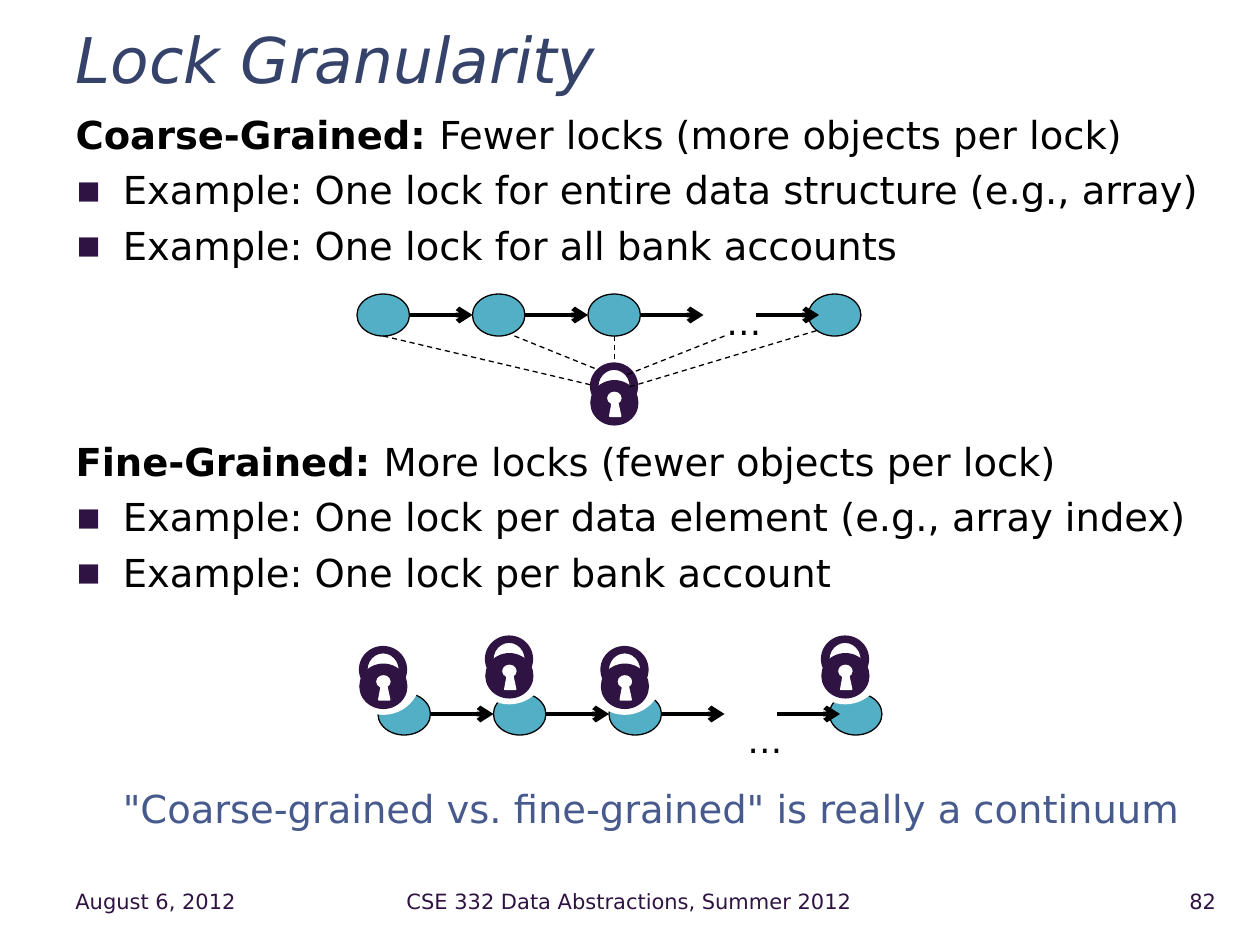
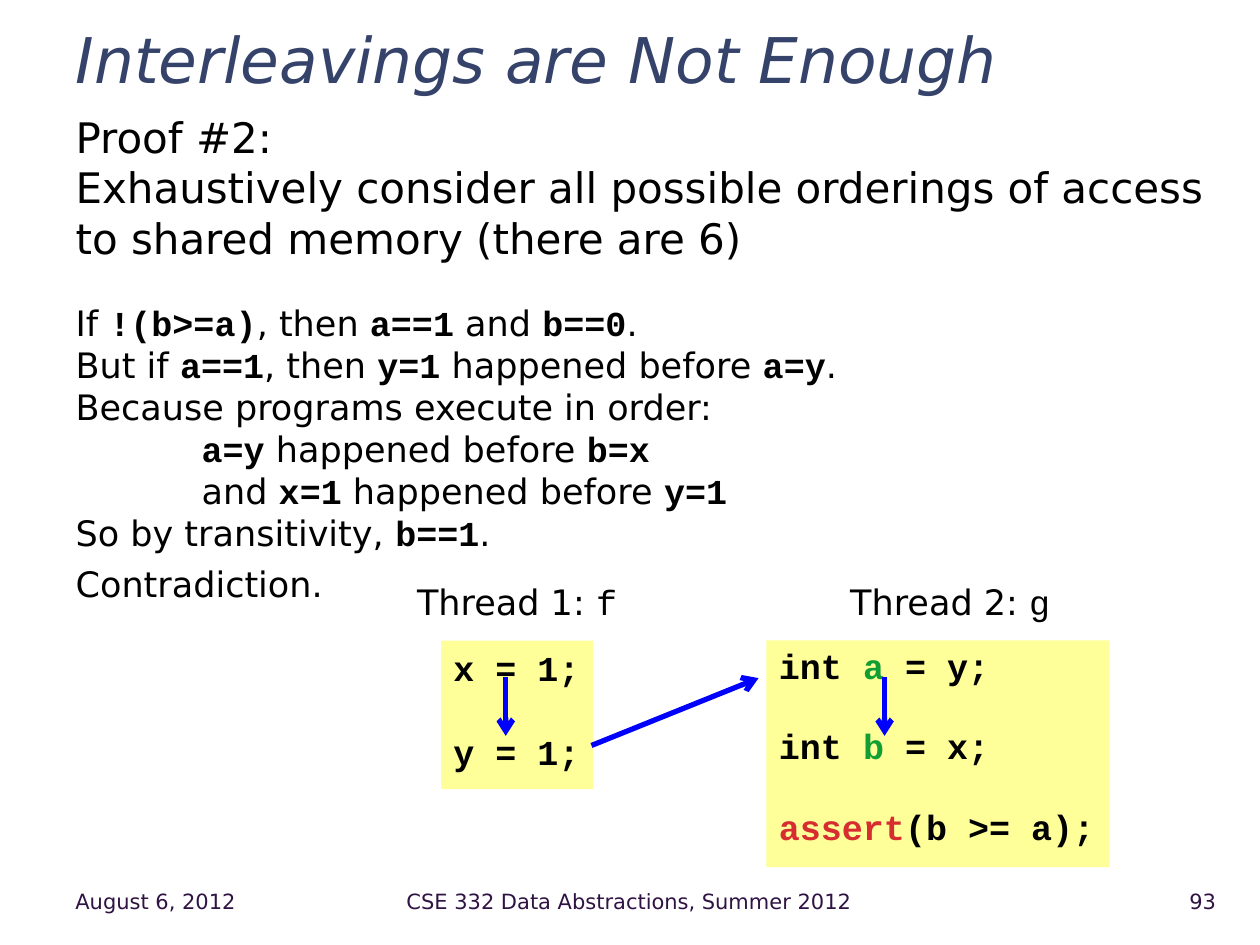
import pptx
import pptx.dml.color
import pptx.enum.dml
import pptx.enum.shapes
import pptx.enum.text
import pptx.oxml
import pptx.oxml.ns
import pptx.shapes.autoshape
import pptx.shapes.connector
import pptx.slide
import pptx.text.text
import pptx.util
from dataclasses import dataclass
from typing import Any, NamedTuple, Optional

Pt = pptx.util.Pt
RGB = pptx.dml.color.RGBColor
ALIGN = pptx.enum.text.PP_ALIGN
ANCHOR = pptx.enum.text.MSO_ANCHOR
OVAL = pptx.enum.shapes.MSO_SHAPE.OVAL
RECTANGLE = pptx.enum.shapes.MSO_SHAPE.RECTANGLE
qn = pptx.oxml.ns.qn

# Shared look
BLACK = RGB(0x00, 0x00, 0x00)
WHITE = RGB(0xFF, 0xFF, 0xFF)
PLUM = RGB(0x2F, 0x13, 0x43)
NAVY = RGB(0x35, 0x43, 0x6A)
SLATE = RGB(0x47, 0x5A, 0x8D)
TEAL = RGB(0x53, 0xAF, 0xC5)
YELLOW = RGB(0xFF, 0xFF, 0x99)
GREEN = RGB(0x11, 0x9F, 0x33)
RED = RGB(0xD6, 0x2D, 0x31)
BLUE = RGB(0x00, 0x00, 0xFF)
SANS = "DejaVu Sans"
MONO = "Courier New"


class Box(NamedTuple):
    left: float
    top: float
    width: float
    height: float


class Span(NamedTuple):
    text: str
    bold: bool = False
    font: str = SANS
    color: RGB = BLACK
    italic: bool = False


@dataclass
class Para:
    spans: list[Span]
    size: float
    before: float = 0
    margin: float = 0
    hanging: float = 0
    bullet: bool = False
    align: Any = ALIGN.LEFT
    spacing: Any = None


class Link(NamedTuple):
    x1: float
    y1: float
    x2: float
    y2: float
    color: RGB = BLACK
    width: float = 2.75
    dashed: bool = False


# Text
def format_bullet(paragraph: pptx.text.text._Paragraph, item: Para) -> None:
    props = paragraph._p.get_or_add_pPr()
    props.set("marL", str(Pt(item.margin)))
    props.set("indent", str(Pt(-item.hanging)))
    marks = ["<a:buNone %s/>"]
    if item.bullet:
        marks = [f'<a:buClr %s><a:srgbClr val="{PLUM}"/></a:buClr>',
                 f'<a:buFont %s typeface="{SANS}"/>', '<a:buChar %s char="▪"/>']
    for mark in marks:
        props.append(pptx.oxml.parse_xml(mark % pptx.oxml.ns.nsdecls("a")))


def write(frame: pptx.text.text.TextFrame, items: list[Para], anchor: Any = ANCHOR.TOP,
          wrap: bool = True, inset: float = 3.6) -> None:
    frame.auto_size = pptx.enum.text.MSO_AUTO_SIZE.NONE
    frame.word_wrap = wrap
    frame.vertical_anchor = anchor
    frame.margin_left = frame.margin_right = Pt(7.2)
    frame.margin_top = frame.margin_bottom = Pt(inset)
    for index, item in enumerate(items):
        paragraph = frame.add_paragraph() if index else frame.paragraphs[0]
        paragraph.alignment = item.align
        paragraph.space_before = Pt(item.before)
        paragraph.space_after = Pt(0)
        paragraph.line_spacing = item.spacing
        format_bullet(paragraph, item)
        for span in item.spans:
            run = paragraph.add_run()
            run.text = span.text
            run.font.name = span.font
            run.font.size = Pt(item.size)
            run.font.bold = span.bold
            run.font.italic = span.italic
            run.font.color.rgb = span.color


def points(box: Box) -> list[pptx.util.Length]:
    return [Pt(value) for value in box]


def add_text(slide: pptx.slide.Slide, box: Box, item: Para, **layout: Any) -> None:
    write(slide.shapes.add_textbox(*points(box)).text_frame, [item], **layout)


def fill_placeholder(holder: Any, box: Box, items: list[Para], **layout: Any) -> None:
    holder.left, holder.top, holder.width, holder.height = points(box)
    write(holder.text_frame, items, **layout)


def code(text: str, color: RGB = BLACK) -> Span:
    return Span(text, True, MONO, color)


def prose(text: str) -> list[Span]:
    """Parts between backticks are code."""
    return [code(part) if index % 2 else Span(part)
            for index, part in enumerate(text.split("`")) if part]


# Shapes
def paint(shape: pptx.shapes.autoshape.Shape, fill: RGB, line: Optional[RGB],
          width: float = 1) -> None:
    shape.shadow.inherit = False
    shape.fill.solid()
    shape.fill.fore_color.rgb = fill
    if line is None:
        shape.line.fill.background()
    else:
        shape.line.color.rgb = line
        shape.line.width = Pt(width)


def add_link(slide: pptx.slide.Slide, link: Link) -> None:
    connector = slide.shapes.add_connector(
        pptx.enum.shapes.MSO_CONNECTOR.STRAIGHT,
        Pt(link.x1), Pt(link.y1), Pt(link.x2), Pt(link.y2))
    connector.line.color.rgb = link.color
    connector.line.width = Pt(link.width)
    props = connector._element.spPr
    if link.dashed:
        connector.line.dash_style = pptx.enum.dml.MSO_LINE.DASH
    else:
        head = props.find(qn("a:ln")).makeelement(qn("a:tailEnd"), {"type": "arrow"})
        props.find(qn("a:ln")).append(head)
    props.append(props.makeelement(qn("a:effectLst"), {}))


LOCK_DISCS = [  # halo, shackle, shackle opening, body, keyhole
    (Box(0, 0, 42, 42), WHITE, WHITE),
    (Box(7.6, 3.6, 26.6, 26), PLUM, PLUM),
    (Box(11.5, 6.9, 18.8, 20), WHITE, PLUM),
    (Box(7.8, 13.7, 26.6, 25), PLUM, PLUM),
    (Box(16.4, 19.2, 9.4, 8.6), WHITE, PLUM),
]
KEYHOLE_SLOT = [(18.5, 33.8), (19.9, 26.3), (23, 26.3), (24.6, 33.8)]


def add_lock(slide: pptx.slide.Slide, left: float, top: float) -> None:
    parts = slide.shapes.add_group_shape().shapes
    for disc, fill, line in LOCK_DISCS:
        box = disc._replace(left=left + disc.left, top=top + disc.top)
        paint(parts.add_shape(OVAL, *points(box)), fill, line)
    corners = [(Pt(left + x), Pt(top + y)) for x, y in KEYHOLE_SLOT]
    outline = parts.build_freeform(*corners[0])
    outline.add_line_segments(corners[1:], close=True)
    paint(outline.convert_to_shape(), WHITE, WHITE)


def add_linked_list(slide: pptx.slide.Slide, left: float, top: float,
                    dots_drop: float) -> None:
    for offset in (0, 66, 132, 258):
        node = slide.shapes.add_shape(OVAL, *points(Box(left + offset, top, 30, 24)))
        paint(node, TEAL, BLACK, 0.75)
    for index in range(4):
        start = left + 30 + 66 * index
        add_link(slide, Link(start, top + 12, start + 36, top + 12))
    add_text(slide, Box(left + 204, top + dots_drop, 34.5, 31.5),
             Para([Span("…")], 20), wrap=False)


def add_code_box(slide: pptx.slide.Slide, box: Box, lines: list[list[Span]],
                 pitch: float) -> None:
    panel = slide.shapes.add_shape(RECTANGLE, *points(box))
    paint(panel, YELLOW, None)
    gap = pitch + 8  # one open line between statements
    write(panel.text_frame,
          [Para(line, 20, before=gap if index else 0, spacing=Pt(pitch))
           for index, line in enumerate(lines)], wrap=False, inset=7.2)


# Frame common to both slides
def add_slide(deck: Any, title: str, number: int, body: list[Para],
              body_width: float) -> pptx.slide.Slide:
    slide = deck.slides.add_slide(deck.slide_layouts[1])
    fill_placeholder(slide.shapes.title, Box(36, 12, 666, 38),
                     [Para([Span(title, color=NAVY, italic=True)], 36, spacing=1.1)],
                     anchor=ANCHOR.MIDDLE)
    fill_placeholder(slide.placeholders[1], Box(36, 60, body_width, 432), body)
    for left, width, text, align in (
            (36, 126, "August 6, 2012", ALIGN.LEFT),
            (167, 385, "CSE 332 Data Abstractions, Summer 2012", ALIGN.CENTER),
            (640, 62, str(number), ALIGN.RIGHT)):
        add_text(slide, Box(left, 500.4, width, 28.8),
                 Para([Span(text, color=PLUM)], 12, align=align), anchor=ANCHOR.MIDDLE)
    return slide


def build_granularity(deck: Any) -> None:
    def heading(term: str, meaning: str, before: float) -> Para:
        return Para([Span(term, bold=True), Span(meaning)], 22, before)

    def example(text: str) -> Para:
        return Para([Span("Example: " + text)], 22, 5.1, 27, 27, bullet=True)

    slide = add_slide(deck, "Lock Granularity", 82, [
        heading("Coarse-Grained: ", "Fewer locks (more objects per lock)", 0),
        example("One lock for entire data structure (e.g., array)"),
        example("One lock for all bank accounts"),
        heading("Fine-Grained: ", "More locks (fewer objects per lock)", 97.5),
        example("One lock per data element (e.g., array index)"),
        example("One lock per bank account"),
        Para([Span('"Coarse-grained vs. fine-grained" is really a continuum', color=SLATE)],
             22, 108.5, align=ALIGN.CENTER),
    ], 672)

    # One lock shared by the whole list
    add_linked_list(slide, 204, 168, 0)
    add_lock(slide, 330, 204)
    for tether in ((219, 192, 338, 220), (294, 192, 341, 211), (351, 192, 351, 207),
                   (466.5, 189, 360, 221), (414, 192, 358.5, 214)):
        add_link(slide, Link(*tether, width=0.75, dashed=True))

    # One lock on each node
    add_linked_list(slide, 216, 396, 10.8)
    for left, top in ((198, 366), (270, 360), (336, 366), (462, 360)):
        add_lock(slide, left, top)


def build_interleavings(deck: Any) -> None:
    steps = [
        ("If `!(b>=a)`, then `a==1` and `b==0`.", 22.4, 0),
        ("But if `a==1`, then `y=1` happened before `a=y`.", 0, 0),
        ("Because programs execute in order:", 0, 0),
        ("`a=y` happened before `b=x`", 0, 72),
        ("and `x=1` happened before `y=1`", 0, 72),
        ("So by transitivity, `b==1`.", 0, 0),
        ("Contradiction.", 4.7, 0),
    ]
    claim = ["Proof #2:", "Exhaustively consider all possible orderings of access "
             "to shared memory (there are 6)"]
    slide = add_slide(
        deck, "Interleavings are Not Enough", 93,
        [Para([Span(text)], 24) for text in claim]
        + [Para(prose(text), 20, before, margin) for text, before, margin in steps], 666)

    # Threads
    add_code_box(slide, Box(252, 366, 87, 85), [[code("x = 1;")], [code("y = 1;")]], 20)
    add_code_box(slide, Box(438, 366, 196, 129.6), [
        [code("int "), code("a", GREEN), code(" = y;")],
        [code("int "), code("b", GREEN), code(" = x;")],
        [code("assert", RED), code("(b >= a);")],
    ], 19)
    for left, width, label, name in ((229, 133, "Thread 1: ", "f"),
                                     (468, 150, "Thread 2: ", "g")):
        add_text(slide, Box(left, 328.3, width, 31.5),
                 Para([Span(label), Span(name, font=MONO)], 20, align=ALIGN.CENTER))

    # Happens-before arrows
    for ends in ((338, 426, 433.5, 387.5), (289, 387, 289, 420.5),
                 (505.5, 387, 505.5, 420.5)):
        add_link(slide, Link(*ends, color=BLUE, width=3))


def main() -> None:
    deck = pptx.Presentation()
    deck.slide_width, deck.slide_height = Pt(720), Pt(540)
    build_granularity(deck)
    build_interleavings(deck)
    deck.save("out.pptx")


if __name__ == "__main__":
    main()
